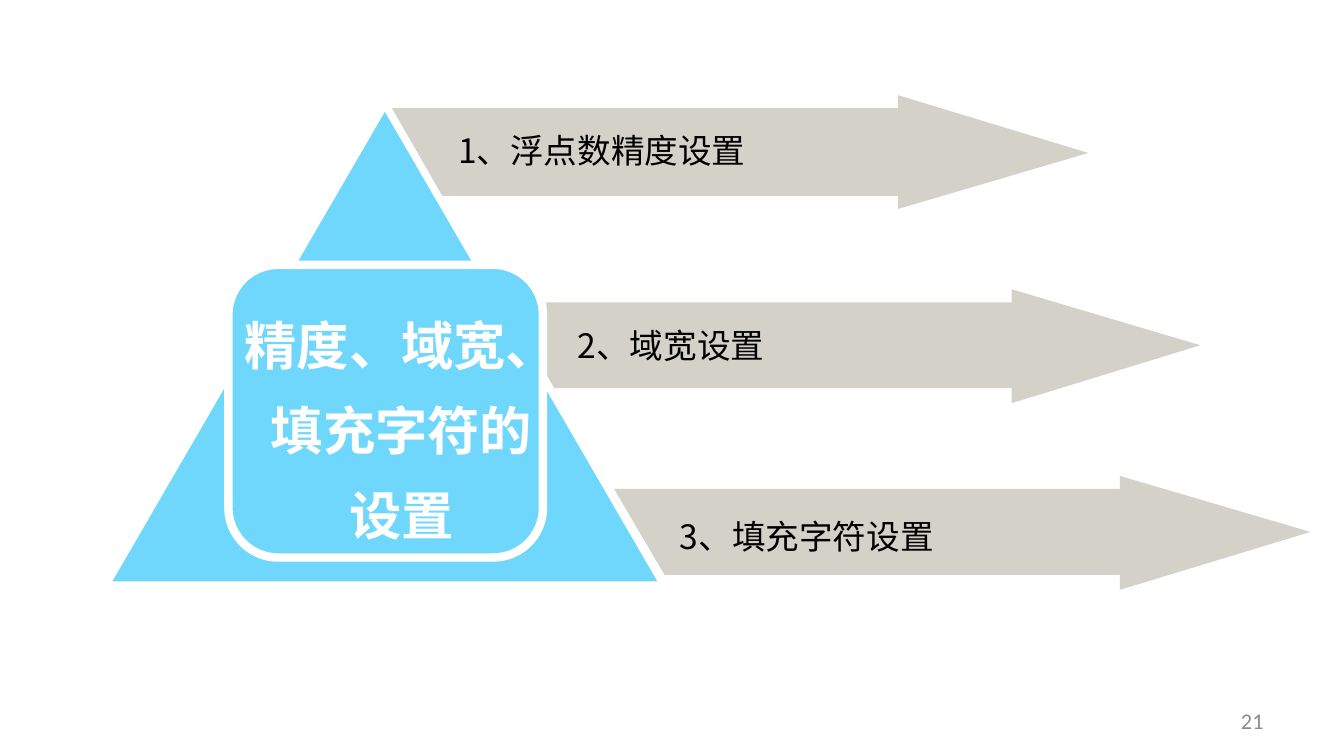
from dataclasses import dataclass

import lxml.etree
import pptx
import pptx.dml.color
import pptx.enum.shapes
import pptx.enum.text
import pptx.oxml.ns
import pptx.util

Pt = pptx.util.Pt
ALIGN = pptx.enum.text.PP_ALIGN
ANCHOR = pptx.enum.text.MSO_ANCHOR
SHAPE = pptx.enum.shapes.MSO_SHAPE


@dataclass(frozen=True)
class Theme:
    blue: str = "70D7FC"
    arrow: str = "D0CCC4"
    arrow_opacity: int = 90
    white: str = "FFFFFF"
    black: str = "000000"
    gray: str = "8C8C8C"
    body_font: str = "Noto Sans CJK SC"
    number_font: str = "Calibri"
    title_size: int = 28
    label_size: int = 18
    number_size: int = 12


THEME = Theme()

ARROW_OUTLINE = [
    (0, 7.4), (271.5, 7.4), (271.5, 0), (373, 30.6),
    (271.5, 61.2), (271.5, 53.6), (27, 53.6),
]


def rgb(value):
    return pptx.dml.color.RGBColor.from_string(value)


def add_text(slide, text, box, size, color, font=THEME.body_font, bold=False,
             align=ALIGN.LEFT, anchor=ANCHOR.TOP, line_spacing=None):
    frame = slide.shapes.add_textbox(*map(Pt, box)).text_frame
    frame.word_wrap = True
    frame.vertical_anchor = anchor
    frame.text = text
    for paragraph in frame.paragraphs:
        paragraph.alignment = align
        paragraph.line_spacing = line_spacing
        for run in paragraph.runs:
            run.font.name = font
            run.font.size = Pt(size)
            run.font.bold = bold
            run.font.color.rgb = rgb(color)
            east_asian = lxml.etree.SubElement(
                run.font._element, pptx.oxml.ns.qn("a:ea"))
            east_asian.set("typeface", font)


def add_arrow(slide, left, top):
    points = [(left + x, top + y) for x, y in ARROW_OUTLINE]
    builder = slide.shapes.build_freeform(*points[0], scale=Pt(1))
    builder.add_line_segments(points[1:], close=True)
    shape = builder.convert_to_shape()
    shape.shadow.inherit = False
    shape.fill.solid()
    shape.fill.fore_color.rgb = rgb(THEME.arrow)
    shape.line.fill.background()
    color = shape._element.spPr.find(".//" + pptx.oxml.ns.qn("a:srgbClr"))
    alpha = lxml.etree.SubElement(color, pptx.oxml.ns.qn("a:alpha"))
    alpha.set("val", str(THEME.arrow_opacity * 1000))


def add_labelled_arrow(slide, arrow_position, label_position, text):
    add_arrow(slide, *arrow_position)
    add_text(slide, text, (*label_position, 244.8, 28.8),
             THEME.label_size, THEME.black)


def add_blue_shape(slide, kind, box, line_width):
    shape = slide.shapes.add_shape(kind, *map(Pt, box))
    shape.shadow.inherit = False
    shape.fill.solid()
    shape.fill.fore_color.rgb = rgb(THEME.blue)
    shape.line.color.rgb = rgb(THEME.white)
    shape.line.width = Pt(line_width)
    return shape


def add_topic(slide):
    add_blue_shape(slide, SHAPE.ISOSCELES_TRIANGLE, (58.2, 57.6, 296, 255), 2.25)
    panel = add_blue_shape(
        slide, SHAPE.ROUNDED_RECTANGLE, (122.4, 141.9, 168.5, 156.8), 4.5)
    panel.adjustments[0] = 0.17
    add_text(slide, "精度、域宽、\n填充字符的\n设置", (123.8, 152.6, 182.5, 185.8),
             THEME.title_size, THEME.white, bold=True,
             align=ALIGN.CENTER, line_spacing=1.35)


def main():
    presentation = pptx.Presentation()
    presentation.slide_width = Pt(720)
    presentation.slide_height = Pt(405)
    slide = presentation.slides.add_slide(presentation.slide_layouts[6])

    add_text(slide, "21", (516, 375.4, 168, 21.6), THEME.number_size, THEME.gray,
             font=THEME.number_font, align=ALIGN.RIGHT, anchor=ANCHOR.MIDDLE)
    add_labelled_arrow(slide, (270, 154.8), (302.4, 170.6), "2、域宽设置")
    add_topic(slide)
    add_labelled_arrow(slide, (209.8, 51), (238.3, 66.2), "1、浮点数精度设置")
    add_labelled_arrow(slide, (329, 254.7), (357.1, 272.9), "3、填充字符设置")

    presentation.save("out.pptx")


if __name__ == "__main__":
    main()
